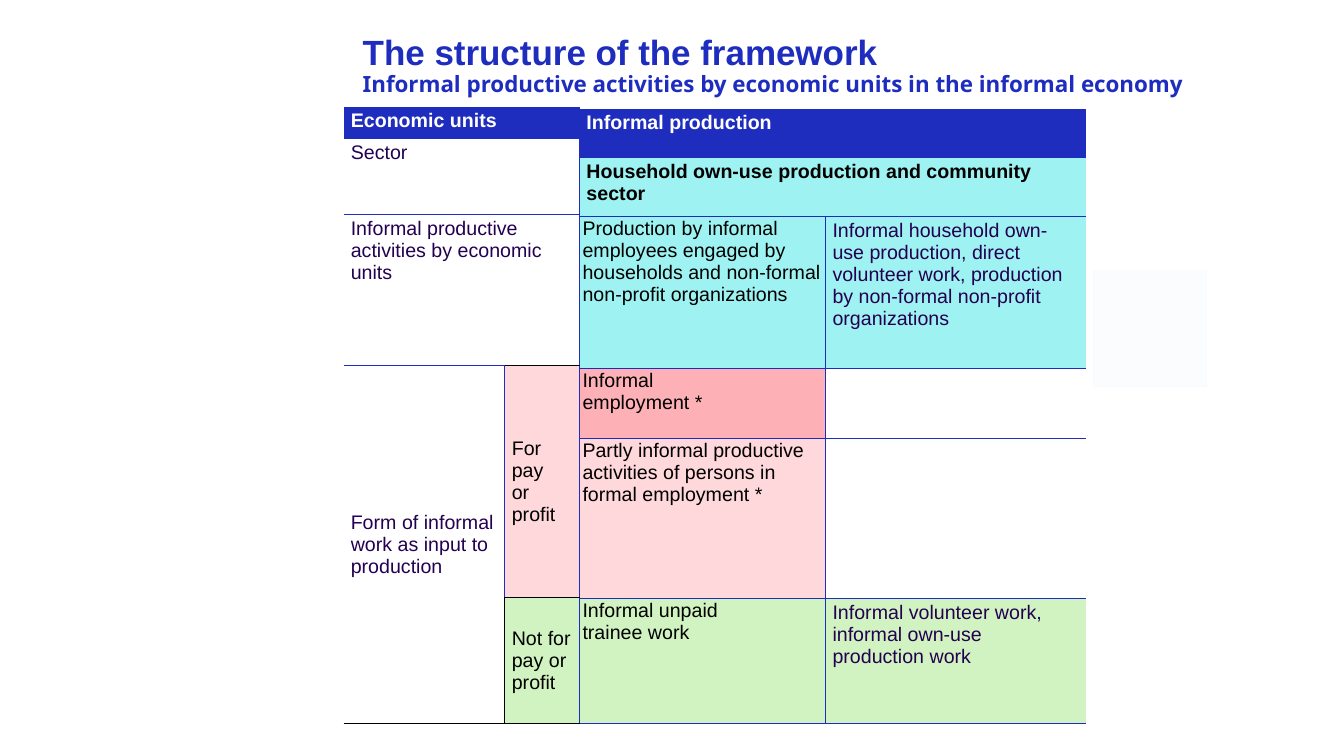
import pptx
import pptx.util
import pptx.dml.color
import pptx.enum.shapes
import pptx.enum.text
import pptx.oxml
import lxml.etree

Cm, Pt = pptx.util.Cm, pptx.util.Pt
BLUE, PURPLE, BLACK, WHITE = "1E2DBE", "230050", "000000", "FFFFFF"
AQUA, ROSE, PINK, GREEN, PALE = "9EF2F2", "FDB1B7", "FED8DB", "D1F3C1", "F8FCFE"
WIDE, TIGHT = (0.18, 0.08), (0.08, 0.03)


def paint(color, value):
    color.rgb = pptx.dml.color.RGBColor.from_string(value)


def add_border(cell, side, value):
    tcPr = cell._tc.get_or_add_tcPr()
    ln = lxml.etree.SubElement(tcPr, pptx.oxml.ns.qn("a:ln" + side), w=str(Pt(1)))
    fill = lxml.etree.SubElement(ln, pptx.oxml.ns.qn("a:solidFill"))
    lxml.etree.SubElement(fill, pptx.oxml.ns.qn("a:srgbClr"), val=value)


prs = pptx.Presentation()
prs.slide_width, prs.slide_height = Cm(33.87), Cm(19.05)
s = prs.slides.add_slide(prs.slide_layouts[5])

title = s.shapes.title
title.left, title.top, title.width, title.height = Cm(9.14), Cm(0.89), Cm(31.14), Cm(2.01)
tf = title.text_frame
tf.text = "The structure of the framework\vInformal productive activities by economic units in the informal economy"
tf.margin_left = tf.margin_right = tf.margin_top = tf.margin_bottom = 0
tf.vertical_anchor = pptx.enum.text.MSO_ANCHOR.TOP
tf.auto_size = pptx.enum.text.MSO_AUTO_SIZE.NONE
tf.word_wrap = True
p = tf.paragraphs[0]
p.alignment = pptx.enum.text.PP_ALIGN.LEFT
p.line_spacing = 0.9
for r, (font, size) in zip(p.runs, [("Arial", 25), ("Noto Sans", 16)]):
    r.font.name, r.font.size, r.font.bold = font, Pt(size), True
    paint(r.font.color, BLUE)

panel = s.shapes.add_shape(pptx.enum.shapes.MSO_SHAPE.RECTANGLE, Cm(27.56), Cm(6.81), Cm(2.84), Cm(2.92))
panel.shadow.inherit = False
panel.fill.solid()
paint(panel.fill.fore_color, PALE)
panel_color = panel.fill._xPr.find(".//" + pptx.oxml.ns.qn("a:srgbClr"))
lxml.etree.SubElement(panel_color, pptx.oxml.ns.qn("a:alpha"), val="70000")
paint(panel.line.color, PALE)
panel.line.width = Pt(1)

production = [
    (0, 0, 1, 2, "Informal production", WHITE, BLUE, WIDE, 1, "", ""),
    (1, 0, 1, 2, "Household own-use production and community sector", BLACK, AQUA, WIDE, 1, "LB", ""),
    (2, 0, 1, 1, "Production by informal employees engaged by households and non-formal "
     "non-profit organizations", BLACK, AQUA, TIGHT, 1, "LRTB", ""),
    (2, 1, 1, 1, "Informal household own-use production, direct volunteer work, production by "
     "non-formal non-profit organizations", PURPLE, AQUA, WIDE, 0, "LB", ""),
    (3, 0, 1, 1, "Informal\vemployment *", BLACK, ROSE, TIGHT, 1, "LRTB", ""),
    (3, 1, 1, 1, "", BLACK, None, WIDE, 0, "LTB", ""),
    (4, 0, 1, 1, "Partly informal productive activities of persons in formal employment *",
     BLACK, PINK, TIGHT, 1, "LRTB", ""),
    (4, 1, 1, 1, "", BLACK, None, WIDE, 0, "LTB", ""),
    (5, 0, 1, 1, "Informal unpaid\vtrainee work", BLACK, GREEN, TIGHT, 1, "LRTB", ""),
    (5, 1, 1, 1, "Informal volunteer work, informal own-use production work",
     PURPLE, GREEN, WIDE, 0, "LTB", ""),
]
units = [
    (0, 0, 1, 2, "Economic units", WHITE, BLUE, WIDE, 1, "R", ""),
    (1, 0, 1, 2, "Sector", PURPLE, None, WIDE, 1, "RB", ""),
    (2, 0, 1, 2, "Informal productive\vactivities by economic units", PURPLE, None, WIDE, 1, "RTB", ""),
    (3, 0, 2, 1, "Form of informal work as input to production", PURPLE, None, WIDE, 1, "RT", "B"),
    (3, 1, 1, 1, "For pay\vor profit", BLACK, PINK, WIDE, 1, "LR", "TB"),
    (4, 1, 1, 1, "Not for pay or profit", BLACK, GREEN, WIDE, 1, "R", "LTB"),
]
tables = [
    (14.6, 2.74, [6.2, 6.58], [1.24, 1.47, 3.84, 1.75, 4.04, 3.15], production, 6),
    (8.66, 2.69, [4.06, 1.88], [0.81, 1.91, 3.81, 5.84, 3.18], units, 3),
]

for left, top, widths, heights, cells, first_middle_row in tables:
    frame = s.shapes.add_table(len(heights), len(widths), Cm(left), Cm(top), Cm(sum(widths)), Cm(sum(heights)))
    table = frame.table
    table.first_row = table.horz_banding = False
    style = table._tbl.tblPr.find(pptx.oxml.ns.qn("a:tableStyleId"))
    style.text = "{2D5ABB26-0587-4C30-8999-92F81FD0307C}"
    for column, width in zip(table.columns, widths):
        column.width = Cm(width)
    for row, height in zip(table.rows, heights):
        row.height = Cm(height)
    for row, col, down, across, text, color, fill, margins, spacing, blue, black in cells:
        cell = table.cell(row, col)
        if down * across > 1:
            cell.merge(table.cell(row + down - 1, col + across - 1))
        for side in "LRTB":
            if side in blue + black:
                add_border(cell, side, BLACK if side in black else BLUE)
        if fill:
            cell.fill.solid()
            paint(cell.fill.fore_color, fill)
        else:
            cell.fill.background()
        cell.margin_left = cell.margin_right = Cm(margins[0])
        cell.margin_top = cell.margin_bottom = Cm(margins[1])
        if row >= first_middle_row:
            cell.vertical_anchor = pptx.enum.text.MSO_ANCHOR.MIDDLE
        cell.text_frame.text = text
        p = cell.text_frame.paragraphs[0]
        p.space_after = Pt(spacing)
        for r in p.runs:
            r.font.name, r.font.size = "Arial", Pt(14)
            r.font.bold = color == WHITE or text.startswith("Household")
            paint(r.font.color, color)

prs.save("out.pptx")
